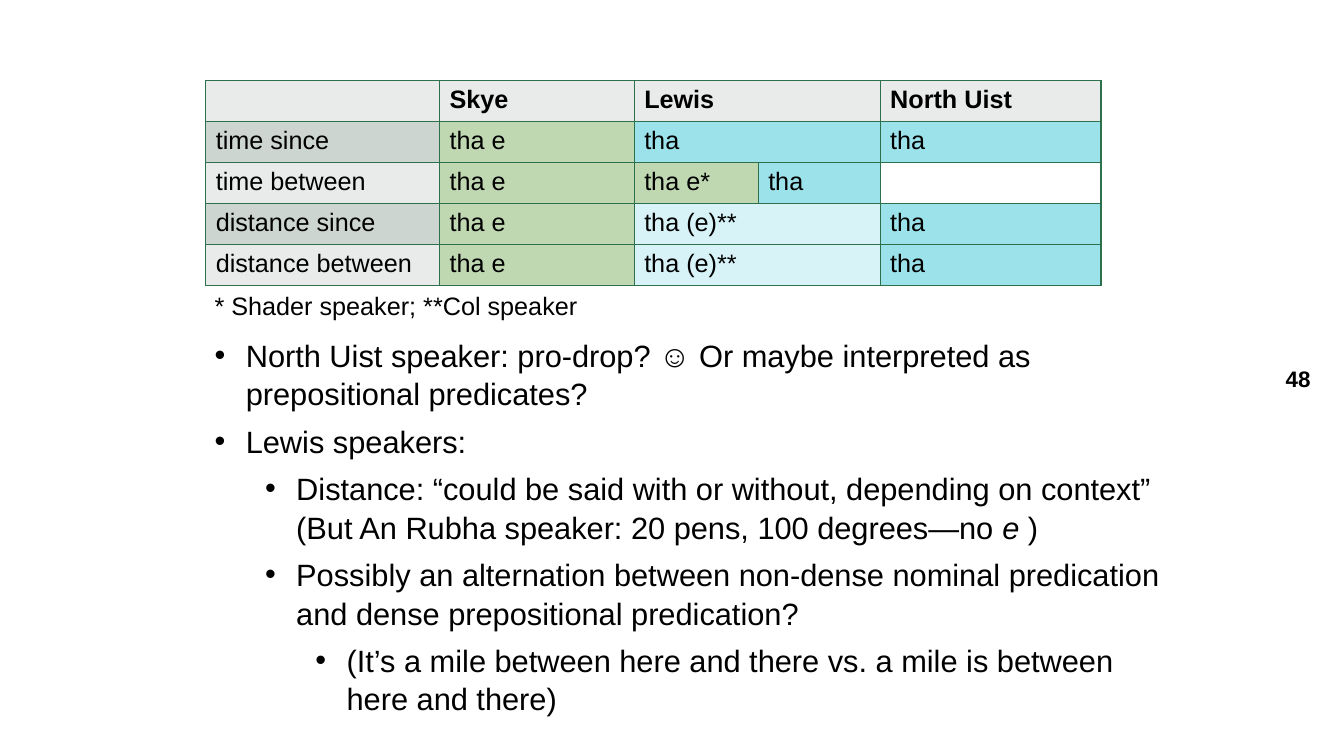
from lxml import etree
from pptx import Presentation
from pptx import util as u
from pptx.dml.color import RGBColor
from pptx.enum import text
from pptx.oxml import ns

BLACK = RGBColor(0x00, 0x00, 0x00)
GREEN_LINE = RGBColor(0x2D, 0x71, 0x4C)
PALE_GREY = RGBColor(0xE8, 0xEB, 0xE9)
GREY = RGBColor(0xCD, 0xD5, 0xD0)
GREEN = RGBColor(0xC0, 0xD8, 0xB2)
CYAN = RGBColor(0x9B, 0xE2, 0xEA)
PALE_CYAN = RGBColor(0xD7, 0xF3, 0xF7)


def write(p, words, size=18, bold=False, italic=False):
    r = p.add_run()
    r.text = words
    r.font.name = "Arial"
    r.font.size = u.Pt(size)
    r.font.bold = bold
    r.font.italic = italic
    r.font.color.rgb = BLACK


def add_box(left, top, width, height):
    """Add a wrapping text box, in inches, and return its text frame."""
    s = slide.shapes.add_textbox(*map(u.Inches, (left, top, width, height)))
    s.text_frame.word_wrap = True
    return s.text_frame


prs = Presentation()
prs.slide_width, prs.slide_height = u.Inches(13.33), u.Inches(7.5)
slide = prs.slides.add_slide(prs.slide_layouts[6])

# Table of forms by dialect; None continues the cell to its left
columns = [2.32, 1.93, 1.23, 1.21, 2.19]
skye = ("tha e", GREEN)
tha = ("tha", CYAN)
optional = ("tha (e)**", PALE_CYAN)
rows = [
    [("", PALE_GREY), ("Skye", PALE_GREY), ("Lewis", PALE_GREY), None, ("North Uist", PALE_GREY)],
    [("time since", GREY), skye, tha, None, tha],
    [("time between", PALE_GREY), skye, ("tha e*", GREEN), tha, ("", None)],
    [("distance since", GREY), skye, optional, None, tha],
    [("distance between", PALE_GREY), skye, optional, None, tha],
]
table = slide.shapes.add_table(
    len(rows), len(columns), u.Inches(2.04), u.Inches(0.8),
    u.Inches(sum(columns)), u.Inches(2.03)).table
for column, width in zip(table.columns, columns):
    column.width = u.Inches(width)
for i, row in enumerate(rows):
    for j, entry in enumerate(row):
        cell = table.cell(i, j)
        tcPr = cell._tc.get_or_add_tcPr()
        for side in ("a:lnL", "a:lnR", "a:lnT", "a:lnB"):
            ln = etree.SubElement(tcPr, ns.qn(side), w=str(u.Pt(1)))
            line_fill = etree.SubElement(ln, ns.qn("a:solidFill"))
            etree.SubElement(line_fill, ns.qn("a:srgbClr"), val=str(GREEN_LINE))
        if entry is None:
            table.cell(i, j - 1).merge(cell)
            continue
        words, colour = entry
        if colour is None:
            cell.fill.background()
        else:
            cell.fill.solid()
            cell.fill.fore_color.rgb = colour
        if words:
            write(cell.text_frame.paragraphs[0], words, bold=i == 0)

write(add_box(2.03, 2.83, 4.93, 0.44).paragraphs[0], "* Shader speaker; **Col speaker")

# Bullets: level, then runs as (words, italic)
bullets = [
    (0, [("North Uist speaker: pro-drop? ☺ Or maybe interpreted as prepositional predicates?", False)]),
    (0, [("Lewis speakers:", False)]),
    (1, [("Distance: “could be said with or without, depending on context” "
          "(But An Rubha speaker: 20 pens, 100 degrees—no ", False), ("e ", True), (")", False)]),
    (1, [("Possibly an alternation between non-dense nominal predication "
          "and dense prepositional predication?", False)]),
    (2, [("(It’s a mile between here and there vs. a mile is between here and there)", False)]),
]
tf = add_box(2.03, 3.27, 9.72, 3.77)
for i, (level, runs) in enumerate(bullets):
    p = tf.add_paragraph() if i else tf.paragraphs[0]
    p.level = level
    p.line_spacing = 1.05
    if i:
        p.space_before = u.Pt(6)
    pPr = p._p.get_or_add_pPr()
    pPr.set("marL", str(u.Inches(0.31 + 0.5 * level)))
    pPr.set("indent", str(u.Inches(-0.31)))
    etree.SubElement(pPr, ns.qn("a:buFont"), typeface="Arial")
    etree.SubElement(pPr, ns.qn("a:buChar"), char="•")
    for words, italic in runs:
        write(p, words, size=22, italic=italic)

# Slide number
tf = add_box(12.49, 3.52, 0.77, 0.47)
tf.vertical_anchor = text.MSO_ANCHOR.MIDDLE
tf.paragraphs[0].alignment = text.PP_ALIGN.CENTER
write(tf.paragraphs[0], "48", size=16, bold=True)

prs.save("out.pptx")
